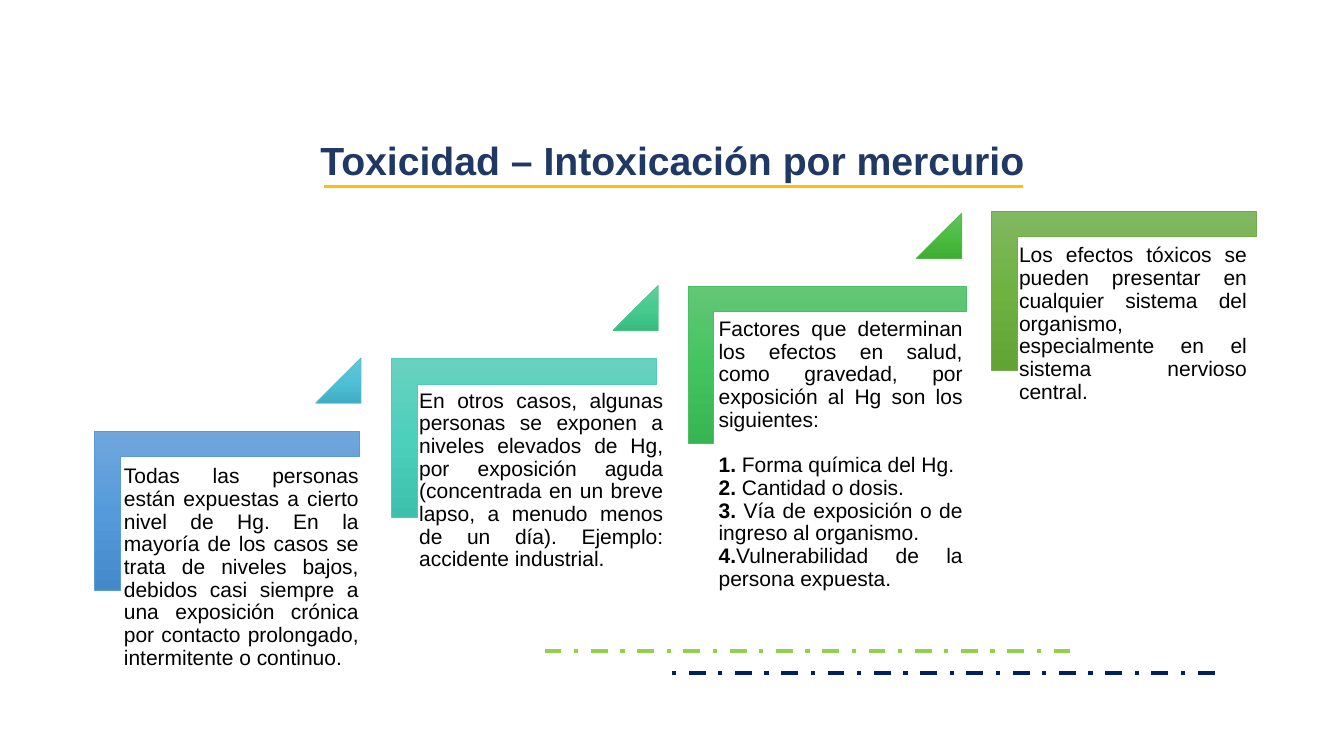
from copy import deepcopy
from dataclasses import dataclass

from pptx import Presentation
from pptx.dml.color import RGBColor
from pptx.enum.dml import MSO_LINE
from pptx.enum.shapes import MSO_CONNECTOR, MSO_SHAPE
from pptx.enum.text import MSO_ANCHOR, MSO_AUTO_SIZE, PP_ALIGN
from pptx.oxml.ns import qn
from pptx.util import Pt
from lxml import etree

NAVY = RGBColor(0x1F, 0x38, 0x64)
DARK_BLUE = RGBColor(0x00, 0x20, 0x60)
GOLD = RGBColor(0xFF, 0xC0, 0x00)
LIME = RGBColor(0x92, 0xD0, 0x50)
BLACK = RGBColor(0x00, 0x00, 0x00)


def shades(*codes):
    return [RGBColor.from_string(code) for code in codes]


# Three gradient colours, then the outline
BLUE = shades("71A6DB", "559BDB", "448ACA", "5B9BD5")
SKY = shades("6EC4D6", "50C0D6", "40AFC5", "56BCD0")
TEAL = shades("6AD1C0", "4CD0BC", "3CC0AC", "52CAB8")
MINT = shades("67CC9A", "47CB8E", "39BB7F", "4DC58D")
GREEN = shades("64C677", "44C460", "36B552", "49BF64")
LEAF = shades("69C062", "4CBD41", "3FAD34", "50B846")
OLIVE = shades("81B861", "6FB242", "62A336", "70AD47")

FONT = "Arial"
CORNER_RATIO = 0.161
MARKER_SIZE = 32.4
MARKER_RISE = 52.2
MARKER_SHIFT = 63.4  # from the middle of the step


@dataclass
class Step:
    box: tuple  # left, top, width, height of the corner
    text_box: tuple  # offset from the corner, then size
    insets: tuple  # sides, top and bottom
    corner_colors: list
    marker_colors: list
    paragraphs: list  # (bold lead, text, space before)


STEPS = [
    Step((67.3, 307.8, 189.4, 113.8), (16.9, 20.5, 176.4, 147.6), (4.3, 4.3), BLUE, SKY,
         [("", "Todas las personas están expuestas a cierto nivel de Hg. En la mayoría de los "
               "casos se trata de niveles bajos, debidos casi siempre a una exposición crónica "
               "por contacto prolongado, intermitente o continuo.", 0)]),
    Step((279.7, 256, 189.4, 113.8), (12.6, 19, 188.6, 156.2), (7.2, 3.6), TEAL, MINT,
         [("", "En otros casos, algunas personas se exponen a niveles elevados de Hg, por "
               "exposición aguda (concentrada en un breve lapso, a menudo menos de un día). "
               "Ejemplo: accidente industrial.", 0)]),
    Step((491.8, 204.5, 198.7, 112.3), (14.4, 19.4, 188.6, 221.8), (7.2, 3.6), GREEN, LEAF,
         [("", "Factores que determinan los efectos en salud, como gravedad, por exposición "
               "al Hg son los siguientes:", 0),
          ("1. ", "Forma química del Hg.", 16.2),
          ("2. ", "Cantidad o dosis.", 0),
          ("3. ", "Vía de exposición o de ingreso al organismo.", 0),
          ("4.", "Vulnerabilidad de la persona expuesta.", 0)]),
    Step((708.1, 150.8, 189.4, 113.8), (15.5, 19.8, 171.4, 149.8), (4.3, 4.3), OLIVE, None,
         [("", "Los efectos tóxicos se pueden presentar en cualquier sistema del organismo, "
               "especialmente en el sistema nervioso central.", 0)]),
]


def paint(shape, colors):
    """Vertical three-colour gradient with a thin outline."""
    shape.shadow.inherit = False
    shape.fill.gradient()
    shape.fill.gradient_angle = 270
    gradient = shape._element.spPr.find(qn("a:gradFill"))
    gradient.set("rotWithShape", "0")
    stop_list = gradient.find(qn("a:gsLst"))
    stop_list.append(deepcopy(stop_list[-1]))
    for stop, color, position in zip(shape.fill.gradient_stops, colors, (0, 0.5, 1)):
        stop.color.rgb = color
        stop.position = position
    shape.line.color.rgb = colors[3]
    shape.line.width = Pt(0.5)


def add_run(paragraph, text, size, color, bold=False):
    run = paragraph.add_run()
    run.text = text
    run.font.name = FONT
    run.font.size = Pt(size)
    run.font.bold = bold
    run.font.color.rgb = color


def add_rule(slide, start_x, end_x, y, color, width, dash=None):
    rule = slide.shapes.add_connector(
        MSO_CONNECTOR.STRAIGHT, Pt(start_x), Pt(y), Pt(end_x), Pt(y))
    rule.line.color.rgb = color
    rule.line.width = Pt(width)
    if dash:
        rule.line.dash_style = dash
    etree.SubElement(rule._element.spPr, qn("a:effectLst"))


def add_heading(slide, left, top, width, height):
    heading = slide.shapes.title
    heading.left, heading.top = Pt(left), Pt(top)
    heading.width, heading.height = Pt(width), Pt(height)
    frame = heading.text_frame
    frame.auto_size = MSO_AUTO_SIZE.NONE
    frame.vertical_anchor = MSO_ANCHOR.MIDDLE
    paragraph = frame.paragraphs[0]
    paragraph.alignment = PP_ALIGN.CENTER
    paragraph.line_spacing = 0.9
    add_run(paragraph, "Toxicidad – Intoxicación por mercurio", 28, NAVY, True)
    # Underline
    add_rule(slide, left + 165, left + 664.6, top + 71.3, GOLD, 2.25)


def add_step(slide, step):
    left, top, width, height = step.box
    middle_x, middle_y = left + width / 2, top + height / 2

    # Corner, a quarter turn clockwise about its middle
    corner = slide.shapes.add_shape(
        MSO_SHAPE.CORNER, Pt(middle_x - height / 2), Pt(middle_y - width / 2),
        Pt(height), Pt(width))
    corner.rotation = 90
    corner.adjustments[0] = corner.adjustments[1] = CORNER_RATIO
    paint(corner, step.corner_colors)

    # Marker that leads to the next step
    if step.marker_colors:
        marker = slide.shapes.add_shape(
            MSO_SHAPE.ISOSCELES_TRIANGLE, Pt(middle_x + MARKER_SHIFT),
            Pt(top - MARKER_RISE), Pt(MARKER_SIZE), Pt(MARKER_SIZE))
        marker.adjustments[0] = 1
        paint(marker, step.marker_colors)

    # Explanation
    dx, dy, text_width, text_height = step.text_box
    frame = slide.shapes.add_textbox(
        Pt(left + dx), Pt(top + dy), Pt(text_width), Pt(text_height)).text_frame
    frame.word_wrap = True
    side, end = step.insets
    frame.margin_left = frame.margin_right = Pt(side)
    frame.margin_top = frame.margin_bottom = Pt(end)
    for index, (lead, text, space) in enumerate(step.paragraphs):
        paragraph = frame.add_paragraph() if index else frame.paragraphs[0]
        paragraph.alignment = PP_ALIGN.JUSTIFY
        paragraph.line_spacing = 0.9
        if space:
            paragraph.space_before = Pt(space)
        if lead:
            add_run(paragraph, lead, 15, BLACK, True)
        add_run(paragraph, text, 15, BLACK)


def add_footer_rules(slide, left, top, width, height):
    right, bottom = left + width, top + height
    add_rule(slide, right - 103, left, top, LIME, 3, MSO_LINE.DASH_DOT)
    add_rule(slide, right, left + 87, bottom, DARK_BLUE, 3, MSO_LINE.DASH_DOT)


def main():
    deck = Presentation()
    deck.slide_width, deck.slide_height = Pt(960), Pt(540)
    slide = deck.slides.add_slide(deck.slide_layouts[5])
    add_heading(slide, 66.2, 61.9, 828, 108.7)
    for step in STEPS:
        add_step(slide, step)
    add_footer_rules(slide, 385.9, 465.1, 481.7, 15.8)
    deck.save("out.pptx")


if __name__ == "__main__":
    main()
